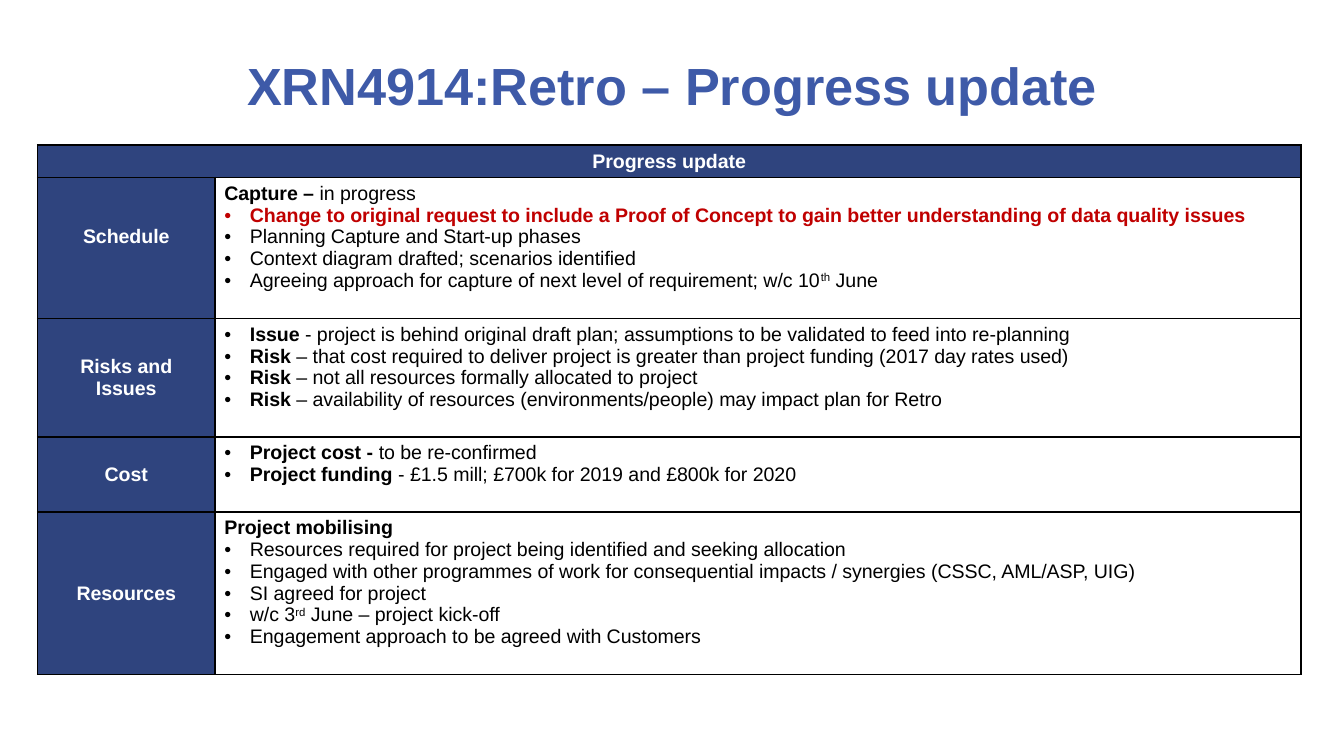
import pptx
import pptx.util
from lxml import etree
from pptx.dml.color import RGBColor
from pptx.enum.text import MSO_ANCHOR, PP_ALIGN
from pptx.oxml.ns import qn

Inches, Pt = pptx.util.Inches, pptx.util.Pt

NAVY = RGBColor(0x2F, 0x44, 0x7E)
BLUE = RGBColor(0x3E, 0x5A, 0xA8)
RED = RGBColor(0xC0, 0x00, 0x00)
BLACK = RGBColor(0, 0, 0)
WHITE = RGBColor(255, 255, 255)

TITLE = "XRN4914:Retro – Progress update"
HEAD = "Progress update"
# Each line is its kind, then runs of (text, style): b bold, ^ superscript.
ROWS = [
    ("Schedule", 1.05, [
        ("head", ("Capture – ", "b"), ("in progress", "")),
        ("alert", ("Change to original request to include a Proof of Concept "
                   "to gain better understanding of data quality issues", "b")),
        ("item", ("Planning Capture and Start-up phases", "")),
        ("item", ("Context diagram drafted; scenarios identified", "")),
        ("item", ("Agreeing approach for capture of next level of "
                  "requirement; w/c 10", ""), ("th", "^"), (" June", "")),
    ]),
    ("Risks and Issues", 0.88, [
        ("item", ("Issue ", "b"), ("- project is behind original draft plan; "
                  "assumptions to be validated to feed into re-planning", "")),
        ("item", ("Risk ", "b"), ("– that cost required to deliver project is "
                  "greater than project funding (2017 day rates used)", "")),
        ("item", ("Risk ", "b"),
                 ("– not all resources formally allocated to project", "")),
        ("item", ("Risk", "b"), (" – availability of resources "
                  "(environments/people) may impact plan for Retro", "")),
    ]),
    ("Cost", 0.56, [
        ("item", ("Project cost - ", "b"), ("to be re-confirmed", "")),
        ("item", ("Project funding ", "b"),
                 ("- £1.5 mill; £700k for 2019 and £800k for 2020", "")),
    ]),
    ("Resources", 1.21, [
        ("head", ("Project mobilising", "b")),
        ("item", ("Resources required for project being identified and "
                  "seeking allocation", "")),
        ("item", ("Engaged with other programmes of work for consequential "
                  "impacts / synergies (CSSC, AML/ASP, UIG)", "")),
        ("item", ("SI agreed for project", "")),
        ("item", ("w/c 3", ""), ("rd", "^"), (" June – project kick-off", "")),
        ("item", ("Engagement approach to be agreed with Customers", "")),
    ]),
]
COLS = [1.32, 8.08]
TOP = 0.24


def style(para, size, color, bold=None):
    font = para.font
    font.name, font.size, font.bold = "Arial", Pt(size), bold
    font.color.rgb = color


def bullet(para):
    props = para._p.get_or_add_pPr()
    props.set("marL", str(Inches(0.19)))
    props.set("indent", str(-Inches(0.19)))
    face = etree.SubElement(props, qn("a:buFont"))
    face.set("typeface", "Arial")
    etree.SubElement(props, qn("a:buChar")).set("char", "•")


def frame(cell):
    """Set the margins, fill and black borders of a cell."""
    cell.margin_left = cell.margin_right = Inches(0.07)
    cell.margin_top = cell.margin_bottom = Inches(0.04)
    props = cell._tc.get_or_add_tcPr()
    for side in ("lnL", "lnR", "lnT", "lnB"):
        line = etree.SubElement(props, qn("a:" + side))
        line.set("w", str(Pt(1)))
        fill = etree.SubElement(line, qn("a:solidFill"))
        etree.SubElement(fill, qn("a:srgbClr")).set("val", str(BLACK))
    cell.fill.solid()
    cell.fill.fore_color.rgb = WHITE


def label(cell, text):
    cell.text = text
    cell.fill.fore_color.rgb = NAVY
    cell.vertical_anchor = MSO_ANCHOR.MIDDLE
    cell.margin_left = cell.margin_right = Inches(0.08)
    para = cell.text_frame.paragraphs[0]
    para.alignment = PP_ALIGN.CENTER
    style(para, 10.5, WHITE, True)


def detail(cell, lines):
    cell.vertical_anchor = MSO_ANCHOR.TOP
    body = cell.text_frame
    for i, (kind, *runs) in enumerate(lines):
        para = body.add_paragraph() if i else body.paragraphs[0]
        if kind != "head":
            bullet(para)
        style(para, 10.5, RED if kind == "alert" else BLACK)
        for text, mark in runs:
            run = para.add_run()
            run.text = text
            run.font.bold = mark == "b"
            if mark == "^":
                run._r.get_or_add_rPr().set("baseline", "30000")


deck = pptx.Presentation()
deck.slide_width = Inches(10)
deck.slide_height = deck.slide_width * 9 // 16
slide = deck.slides.add_slide(deck.slide_layouts[6])

box = slide.shapes.add_textbox(Inches(0.5), Inches(0.28), Inches(9), Inches(0.7))
box.text_frame.word_wrap = True
box.text_frame.vertical_anchor = MSO_ANCHOR.MIDDLE
para = box.text_frame.paragraphs[0]
para.text = TITLE
para.alignment = PP_ALIGN.CENTER
style(para, 28, BLUE, True)

high = TOP + sum(row[1] for row in ROWS)
table = slide.shapes.add_table(len(ROWS) + 1, 2, Inches(0.28), Inches(1.08),
                               Inches(sum(COLS)), Inches(high)).table
for col, wide in zip(table.columns, COLS):
    col.width = Inches(wide)
for cell in table.iter_cells():
    frame(cell)

table.rows[0].height = Inches(TOP)
banner = table.cell(0, 0)
banner.merge(table.cell(0, 1))
label(banner, HEAD)
banner.margin_top = banner.margin_bottom = Inches(0.03)
for i, (name, tall, lines) in enumerate(ROWS, 1):
    table.rows[i].height = Inches(tall)
    label(table.cell(i, 0), name)
    detail(table.cell(i, 1), lines)
table.cell(1, 0).margin_bottom = Inches(0.2)  # lifts the Schedule label

deck.save("out.pptx")
